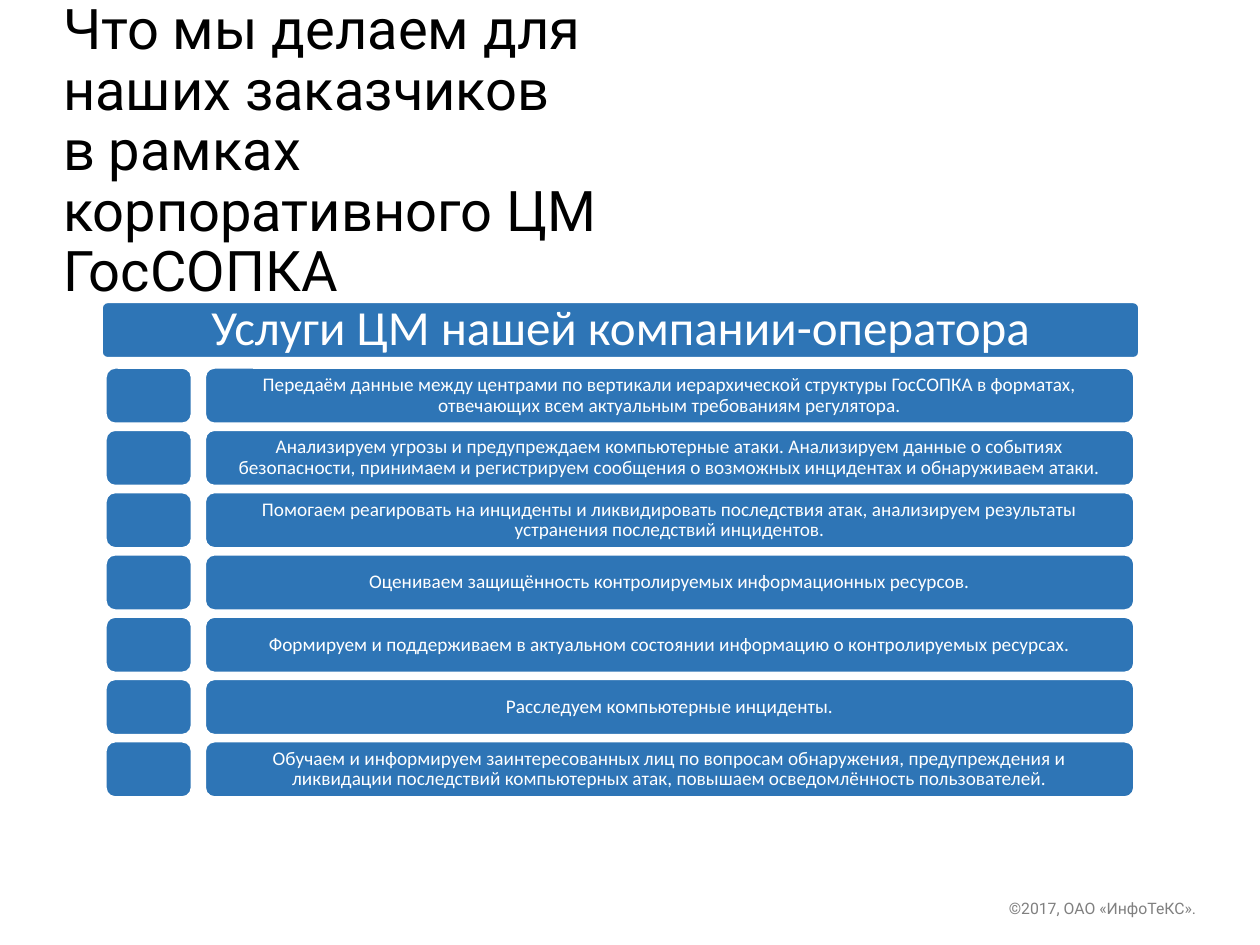
import pptx
import pptx.dml.color
import pptx.enum.shapes
import pptx.enum.text
import pptx.util

BLUE = pptx.dml.color.RGBColor(0x2E, 0x75, 0xB6)
WHITE = pptx.dml.color.RGBColor(0xFF, 0xFF, 0xFF)
BLACK = pptx.dml.color.RGBColor(0x00, 0x00, 0x00)
GRAY = pptx.dml.color.RGBColor(0x80, 0x80, 0x80)
ALIGN = pptx.enum.text.PP_ALIGN
ANCHOR = pptx.enum.text.MSO_ANCHOR
Inches = pptx.util.Inches

TITLE_LINES = [
    "Что мы делаем для наших заказчиков",
    "в рамках корпоративного ЦМ ГосСОПКА",
]
HEADING = "Услуги ЦМ нашей компании-оператора"
SERVICES = [
    "Передаём данные между центрами по вертикали иерархической структуры "
    "ГосСОПКА в форматах, отвечающих всем актуальным требованиям регулятора.",
    "Анализируем угрозы и предупреждаем компьютерные атаки. Анализируем данные "
    "о событиях безопасности, принимаем и регистрируем сообщения о возможных "
    "инцидентах и обнаруживаем атаки.",
    "Помогаем реагировать на инциденты и ликвидировать последствия атак, "
    "анализируем результаты устранения последствий инцидентов.",
    "Оцениваем защищённость контролируемых информационных ресурсов.",
    "Формируем и поддерживаем в актуальном состоянии информацию "
    "о контролируемых ресурсах.",
    "Расследуем компьютерные инциденты.",
    "Обучаем и информируем заинтересованных лиц по вопросам обнаружения, "
    "предупреждения и ликвидации последствий компьютерных атак, повышаем "
    "осведомлённость пользователей.",
]
COPYRIGHT = "©2017, ОАО «ИнфоТеКС»."


def write(paragraph, lines, font_name, size, color):
    """Add each line as a run, with line breaks between them."""
    for index, line in enumerate(lines):
        if index:
            paragraph.add_line_break()
        run = paragraph.add_run()
        run.text = line
        run.font.name = font_name
        run.font.size = pptx.util.Pt(size)
        run.font.color.rgb = color


def add_label(slide, box, lines, size, color, align, anchor, insets):
    """Place unfilled Roboto text in the box."""
    frame = slide.shapes.add_textbox(*map(Inches, box)).text_frame
    frame.word_wrap = True
    frame.vertical_anchor = anchor
    frame.margin_left = frame.margin_right = Inches(insets[0])
    frame.margin_top = frame.margin_bottom = Inches(insets[1])
    paragraph = frame.paragraphs[0]
    paragraph.alignment = align
    write(paragraph, lines, "Roboto", size, color)
    return paragraph


def add_title(slide, box):
    """Place the slide title."""
    paragraph = add_label(slide, box, TITLE_LINES, 32, BLACK,
                          ALIGN.LEFT, ANCHOR.MIDDLE, (0, 0))
    paragraph.line_spacing = 0.9


def add_footer(slide, box):
    """Place the copyright line."""
    add_label(slide, box, [COPYRIGHT], 9, GRAY,
              ALIGN.RIGHT, ANCHOR.TOP, (0.1, 0.05))


def add_tile(slide, box, rounding, text="", size=11, inset=0.11):
    """Place a blue rounded tile with optional centred text."""
    tile = slide.shapes.add_shape(
        pptx.enum.shapes.MSO_SHAPE.ROUNDED_RECTANGLE, *map(Inches, box))
    tile.adjustments[0] = rounding
    tile.shadow.inherit = False
    tile.fill.solid()
    tile.fill.fore_color.rgb = BLUE
    tile.line.color.rgb = WHITE
    tile.line.width = pptx.util.Pt(1)
    if text:
        frame = tile.text_frame
        frame.word_wrap = True
        frame.vertical_anchor = ANCHOR.MIDDLE
        frame.margin_left = frame.margin_right = Inches(inset)
        frame.margin_top = frame.margin_bottom = 0
        paragraph = frame.paragraphs[0]
        paragraph.alignment = ALIGN.CENTER
        paragraph.line_spacing = 0.9
        write(paragraph, [text], "Calibri", size, WHITE)


def add_services(slide, box):
    """Stack the services in equal rows, each with a marker tile."""
    left, top, width, height = box
    pitch = height / len(SERVICES)
    tile_height = pitch * 0.89
    marker_width = width / 12
    text_left = left + marker_width + pitch * 0.22
    for row, service in enumerate(SERVICES):
        row_top = top + row * pitch
        add_tile(slide, (left, row_top, marker_width, tile_height), 0.167)
        add_tile(slide, (text_left, row_top, left + width - text_left, tile_height),
                 0.167, service)


def main():
    """Build and save the slide."""
    deck = pptx.Presentation()
    deck.slide_width = Inches(10)
    deck.slide_height = Inches(7.5)
    slide = deck.slides.add_slide(deck.slide_layouts[6])
    add_footer(slide, (7.42, 7.08, 2.17, 0.22))
    add_title(slide, (0.5, 0, 5.08, 2.42))
    add_tile(slide, (0.81, 2.4, 8.23, 0.44), 0.1, HEADING, 28, 0.08)
    add_services(slide, (0.84, 2.92, 8.16, 3.46))
    deck.save("out.pptx")


if __name__ == "__main__":
    main()
